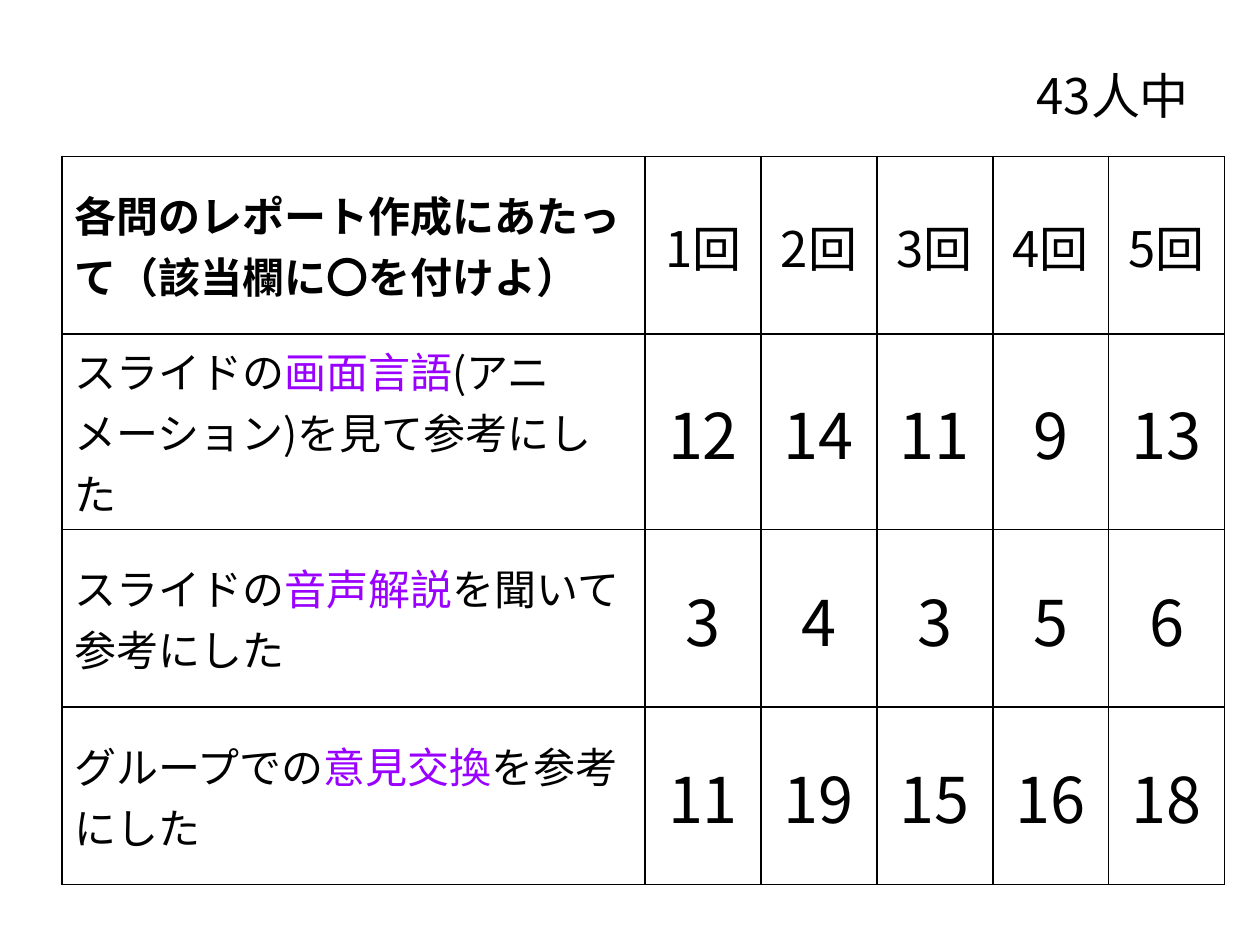
"""Build a slide with a table of survey counts for five report sessions."""
from dataclasses import dataclass

from lxml import etree
from pptx import Presentation
from pptx.dml.color import RGBColor
from pptx.enum.text import MSO_ANCHOR, MSO_AUTO_SIZE, PP_ALIGN
from pptx.oxml.ns import qn
from pptx.util import Inches, Pt

MIDDLE = MSO_ANCHOR.MIDDLE
CENTER = PP_ALIGN.CENTER
GROW = MSO_AUTO_SIZE.SHAPE_TO_FIT_TEXT
FONT = "Noto Sans CJK JP"
BLACK = RGBColor(0x00, 0x00, 0x00)
WHITE = RGBColor(0xFF, 0xFF, 0xFF)
PURPLE = RGBColor(0x99, 0x00, 0xFF)
LABEL_WIDTH, COUNT_WIDTH, ROW_HEIGHT = 4.63, 0.92, 1.41


@dataclass
class Question:
    before: str
    keyword: str
    after: str
    counts: list[int]


HEADING = "各問のレポート作成にあたって（該当欄に〇を付けよ）"
SESSIONS = [f"{n}回" for n in range(1, 6)]
QUESTIONS = [
    Question("スライドの", "画面言語", "(アニメーション)を見て参考にした", [12, 14, 11, 9, 13]),
    Question("スライドの", "音声解説", "を聞いて参考にした", [3, 4, 3, 5, 6]),
    Question("グループでの", "意見交換", "を参考にした", [11, 19, 15, 16, 18]),
]


def add_run(p, text: str, size: int, color: RGBColor = BLACK, bold: bool = False) -> None:
    r = p.add_run()
    r.text = text
    r.font.size = Pt(size)
    r.font.bold = bold
    r.font.color.rgb = color
    r.font.name = FONT
    latin = r.font._element.find(qn("a:latin"))
    ea = etree.Element(qn("a:ea"), typeface=FONT)
    latin.addnext(ea)


def set_space_before(p, percent: int) -> None:
    spacing = etree.SubElement(p._p.get_or_add_pPr(), qn("a:spcBef"))
    etree.SubElement(spacing, qn("a:spcPct"), val=str(percent * 1000))


def format_cell(cell) -> None:
    cell.vertical_anchor = MIDDLE
    tc_pr = cell._tc.get_or_add_tcPr()
    for side in ("lnL", "lnR", "lnT", "lnB"):
        ln = etree.SubElement(tc_pr, qn(f"a:{side}"), w=str(Pt(1)))
        fill = etree.SubElement(ln, qn("a:solidFill"))
        etree.SubElement(fill, qn("a:srgbClr"), val=str(BLACK))
    cell.fill.solid()
    cell.fill.fore_color.rgb = WHITE


def fill_count_cell(cell, text: str, size: int) -> None:
    cell.margin_left = cell.margin_right = cell.margin_top = Inches(0.01)
    cell.margin_bottom = 0
    p = cell.text_frame.paragraphs[0]
    p.alignment = CENTER
    set_space_before(p, 20)
    add_run(p, text, size)


def add_survey_table(slide) -> None:
    rows, cols = len(QUESTIONS) + 1, len(SESSIONS) + 1
    width = LABEL_WIDTH + COUNT_WIDTH * len(SESSIONS)
    table = slide.shapes.add_table(
        rows, cols, Inches(0.49), Inches(1.24), Inches(width), Inches(ROW_HEIGHT * rows)
    ).table
    table.first_row = table.horz_banding = False
    for i, col in enumerate(table.columns):
        col.width = Inches(COUNT_WIDTH if i else LABEL_WIDTH)
    for row in table.rows:
        row.height = Inches(ROW_HEIGHT)
    for cell in table.iter_cells():
        format_cell(cell)

    p = table.cell(0, 0).text_frame.paragraphs[0]
    set_space_before(p, 20)
    add_run(p, HEADING, 24, bold=True)
    for col, session in enumerate(SESSIONS, 1):
        fill_count_cell(table.cell(0, col), session, 28)
    for row, question in enumerate(QUESTIONS, 1):
        p = table.cell(row, 0).text_frame.paragraphs[0]
        add_run(p, question.before, 24)
        add_run(p, question.keyword, 24, PURPLE)
        add_run(p, question.after, 24)
        for col, count in enumerate(question.counts, 1):
            fill_count_cell(table.cell(row, col), str(count), 36)


def add_total(slide) -> None:
    sp = slide.shapes.add_textbox(Inches(8.13), Inches(0.47), Inches(1.57), Inches(0.57))
    tf = sp.text_frame
    tf.word_wrap = True
    tf.auto_size = GROW
    p = tf.paragraphs[0]
    set_space_before(p, 20)
    add_run(p, "43人中", 28)


def main() -> None:
    prs = Presentation()
    prs.slide_width, prs.slide_height = Inches(10), Inches(7.5)
    slide = prs.slides.add_slide(prs.slide_layouts[6])
    add_survey_table(slide)
    add_total(slide)
    prs.save("out.pptx")


if __name__ == "__main__":
    main()
